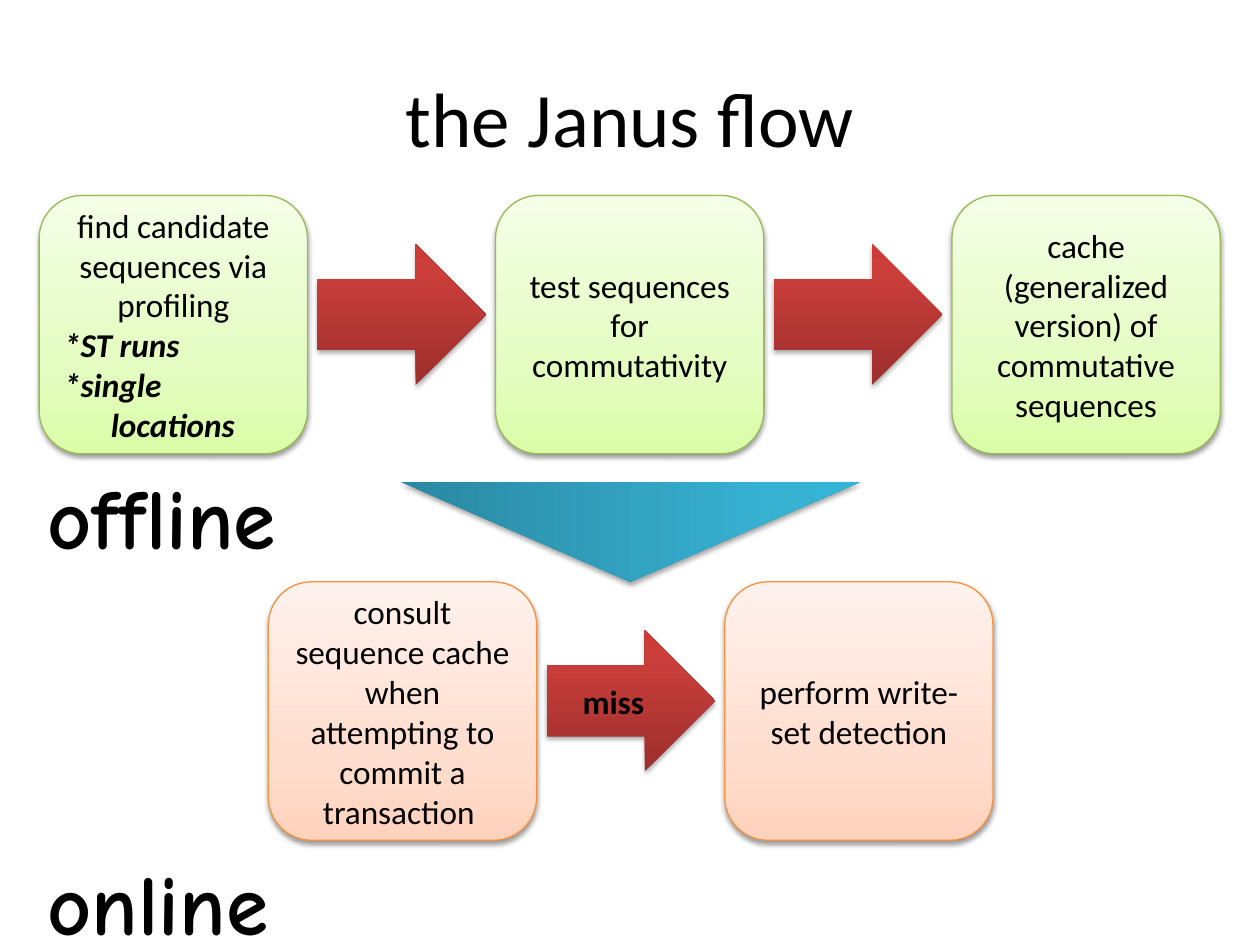
from copy import deepcopy

from lxml.etree import SubElement
from pptx import Presentation
from pptx.dml.color import RGBColor
from pptx.enum.shapes import MSO_SHAPE
from pptx.enum.text import MSO_ANCHOR, PP_ALIGN
from pptx.oxml.ns import qn
from pptx.util import Cm, Pt

GREEN = [(0, "DAFDA7"), (35, "E4FCC2"), (100, "F5FFE7")]
ORANGE = [(0, "FFD2BD"), (35, "FFDED0"), (100, "FFF2ED")]
RED = [(0, "9C2F2D"), (80, "CB3E3A"), (100, "CE3B37")]
TEAL = [(0, "2A88A2"), (80, "37B1D2"), (100, "34B4D6")]

STEP_WIDTH, STEP_HEIGHT, STEP_PITCH = 5.41, 5.21, 9.2


def color(hex_code):
    """Turn a hex string into a colour."""
    return RGBColor.from_string(hex_code)


def write(shape, text, size=19, font="Calibri", bold=False, italic=False,
          align=PP_ALIGN.CENTER, anchor=MSO_ANCHOR.MIDDLE, hanging=0):
    """Add one formatted paragraph to a shape."""
    frame = shape.text_frame
    frame.word_wrap = True
    frame.vertical_anchor = anchor
    paragraph = frame.add_paragraph() if frame.text else frame.paragraphs[0]
    paragraph.alignment = align
    if hanging:
        properties = paragraph._p.get_or_add_pPr()
        properties.set("marL", str(Cm(hanging)))
        properties.set("indent", str(-Cm(hanging)))
    run = paragraph.add_run()
    run.text = text
    run.font.size = Pt(size)
    run.font.name = font
    run.font.bold = bold
    run.font.italic = italic
    run.font.color.rgb = color("000000")


def paint(shape, stops):
    """Fill a shape with a gradient that rises from its bottom edge."""
    shape.fill.gradient()
    shape.fill.gradient_angle = 90
    stop_list = shape._element.spPr.find(qn("a:gradFill")).find(qn("a:gsLst"))
    stop_list.append(deepcopy(stop_list[0]))
    for stop, (position, hex_code) in zip(shape.fill.gradient_stops, stops):
        stop.position = position / 100
        stop.color.rgb = color(hex_code)


def cast_shadow(shape, distance, opacity):
    """Give a shape a soft shadow below it."""
    shape.shadow.inherit = False
    effects = shape._element.spPr.find(qn("a:effectLst"))
    shadow = SubElement(effects, qn("a:outerShdw"), blurRad=str(Pt(3.1)),
                        dist=str(Pt(distance)), dir="5400000", rotWithShape="0")
    black = SubElement(shadow, qn("a:srgbClr"), val="000000")
    SubElement(black, qn("a:alpha"), val=str(opacity * 1000))


def add_text_box(slide, left, top, width, height, text, **text_format):
    """Place free text."""
    box = slide.shapes.add_textbox(Cm(left), Cm(top), Cm(width), Cm(height))
    write(box, text, **text_format)


def add_step(slide, left, top, text, stops, outline, details=()):
    """Place one step of the flow with optional starred details."""
    step = slide.shapes.add_shape(MSO_SHAPE.ROUNDED_RECTANGLE, Cm(left), Cm(top),
                                  Cm(STEP_WIDTH), Cm(STEP_HEIGHT))
    paint(step, stops)
    step.line.color.rgb = color(outline)
    step.line.width = Pt(0.75)
    cast_shadow(step, 1.6, 38)
    write(step, text)
    for detail in details:
        write(step, detail, bold=True, italic=True, align=PP_ALIGN.LEFT, hanging=0.94)


def add_arrow(slide, left, top, width, height, stops):
    """Place a block arrow that points right."""
    arrow = slide.shapes.add_shape(MSO_SHAPE.RIGHT_ARROW, Cm(left), Cm(top),
                                   Cm(width), Cm(height))
    paint(arrow, stops)
    arrow.line.fill.background()
    cast_shadow(arrow, 1.8, 35)
    return arrow


def add_phase(slide, left, top, name, steps, stops, outline, arrow_text=""):
    """Place a row of steps joined by arrows, with the phase name below."""
    for index, (text, *details) in enumerate(steps):
        step_left = left + index * STEP_PITCH
        add_step(slide, step_left, top, text, stops, outline, details)
        if index < len(steps) - 1:
            arrow = add_arrow(slide, step_left + 5.61, top + 0.98, 3.4, 2.84, RED)
            if arrow_text:
                write(arrow, arrow_text, bold=True)
    add_text_box(slide, 0.71, top + 5.28, 7.59, 2.36, name, size=49, font="Comic Neue",
                 bold=True, align=PP_ALIGN.LEFT, anchor=MSO_ANCHOR.TOP)


def add_phase_link(slide, left, top, width, height):
    """Place the wide arrowhead that leads down to the next phase."""
    link = add_arrow(slide, left + (width - height) / 2, top + (height - width) / 2,
                     height, width, TEAL)
    link.rotation = 90
    link.adjustments[0] = 0.72
    link.adjustments[1] = 1


def main():
    """Build the slide and save it."""
    presentation = Presentation()
    presentation.slide_width, presentation.slide_height = Cm(25.4), Cm(19.05)
    slide = presentation.slides.add_slide(presentation.slide_layouts[6])
    add_text_box(slide, 1.27, 0.76, 22.86, 3.18, "the Janus flow", size=44)
    offline_steps = [
        ("find candidate sequences via profiling", "*ST runs", "*single locations"),
        ("test sequences for commutativity",),
        ("cache (generalized version) of commutative sequences",),
    ]
    online_steps = [
        ("consult sequence cache when attempting to commit a transaction ",),
        ("perform write-set detection",),
    ]
    add_phase(slide, 0.79, 3.94, "offline", offline_steps, GREEN, "98B955")
    add_phase_link(slide, 8.08, 9.72, 9.25, 2.01)
    add_phase(slide, 5.41, 11.73, "online", online_steps, ORANGE, "F69240", "miss")
    presentation.save("out.pptx")


if __name__ == "__main__":
    main()
